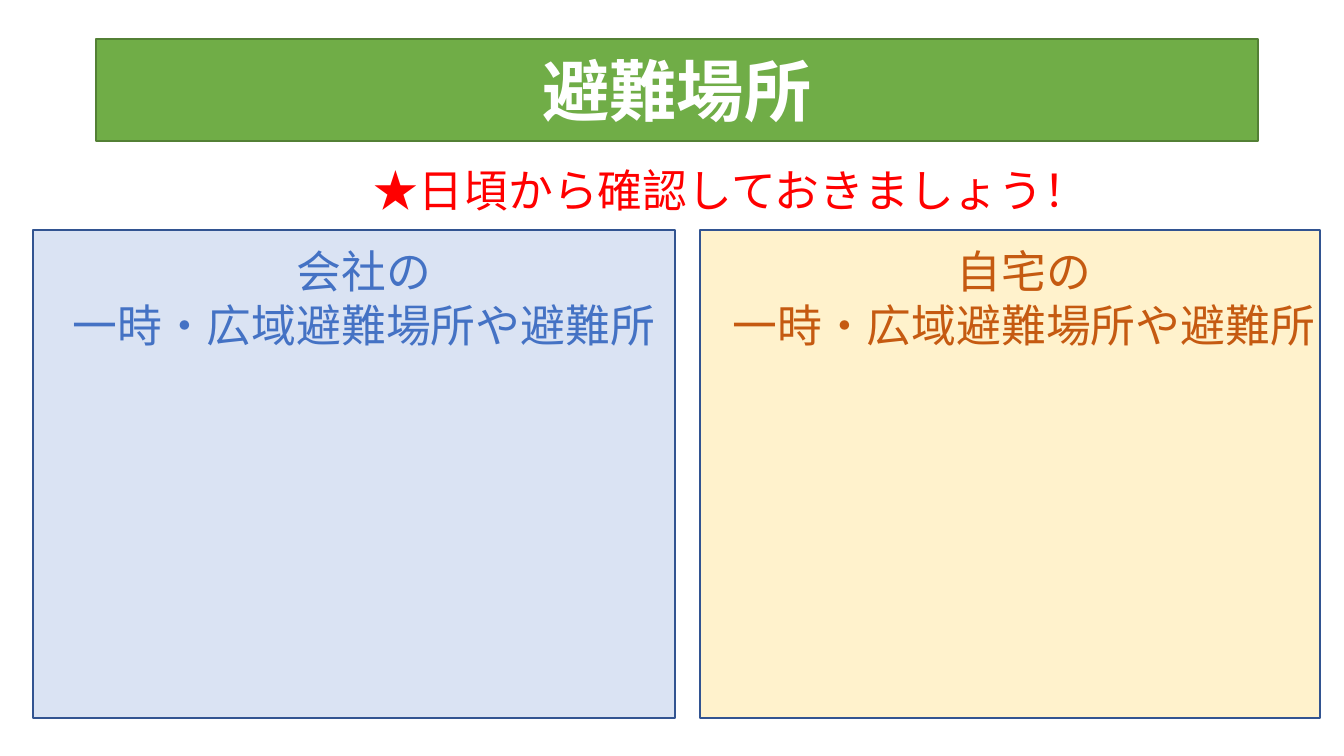
from pptx import Presentation
from pptx.dml.color import RGBColor
from pptx.enum.shapes import MSO_SHAPE
from pptx.enum.text import MSO_ANCHOR, MSO_AUTO_SIZE, PP_ALIGN
from pptx.util import Emu, Pt

WHITE = RGBColor(0xFF, 0xFF, 0xFF)
GREEN = RGBColor(0x70, 0xAD, 0x47)
DARK_GREEN = RGBColor(0x53, 0x80, 0x35)
RED = RGBColor(0xFF, 0x00, 0x00)
BLUE = RGBColor(0x44, 0x72, 0xC4)
PALE_BLUE = RGBColor(0xDA, 0xE3, 0xF3)
NAVY = RGBColor(0x32, 0x54, 0x91)
ORANGE = RGBColor(0xC5, 0x5A, 0x11)
PALE_YELLOW = RGBColor(0xFF, 0xF2, 0xCC)

PX_PER_INCH = 100.8


def px(*lengths):
    """Turn pixel lengths into a list of EMU lengths."""
    return [Emu(round(n * 914400 / PX_PER_INCH)) for n in lengths]


def write(tf, text, size=32, color=WHITE, bold=False, align=PP_ALIGN.CENTER,
          font="Calibri"):
    """Fill a text frame, one paragraph for each line of text."""
    tf.word_wrap = True
    for i, line in enumerate(text.split("\n")):
        p = tf.paragraphs[0] if i == 0 else tf.add_paragraph()
        p.alignment = align
        r = p.add_run()
        r.text = line
        r.font.name = font
        r.font.size = Pt(size)
        r.font.bold = bold
        r.font.color.rgb = color


class SlideBuilder:
    def __init__(self, prs):
        self.line_width = Pt(1)
        self.s = prs.slides.add_slide(prs.slide_layouts[5])

    def paint(self, sp, fill, line):
        sp.fill.solid()
        sp.fill.fore_color.rgb = fill
        sp.line.color.rgb = line
        sp.line.width = self.line_width

    def title(self, text, x, y, w, h, fill, line):
        sp = self.s.shapes.title
        sp.left, sp.top, sp.width, sp.height = px(x, y, w, h)
        self.paint(sp, fill, line)
        tf = sp.text_frame
        tf.auto_size = MSO_AUTO_SIZE.NONE
        tf.vertical_anchor = MSO_ANCHOR.MIDDLE
        write(tf, text, size=48, bold=True)

    def panel(self, x, y, w, h, fill, line=NAVY):
        sp = self.s.shapes.add_shape(MSO_SHAPE.RECTANGLE, *px(x, y, w, h))
        sp.shadow.inherit = False
        self.paint(sp, fill, line)

    def text(self, text, x, y, w, h, **style):
        tf = self.s.shapes.add_textbox(*px(x, y, w, h)).text_frame
        tf.auto_size = MSO_AUTO_SIZE.SHAPE_TO_FIT_TEXT
        write(tf, text, **style)


def main():
    prs = Presentation()
    prs.slide_width, prs.slide_height = px(1344, 756)
    slide = SlideBuilder(prs)

    slide.title("避難場所", 96, 39, 1162, 102, GREEN, DARK_GREEN)
    slide.text("★日頃から確認しておきましょう！", 364, 158, 776, 65,
               color=RED, align=PP_ALIGN.LEFT)

    shelters = [
        ("会社", 33, 642, PALE_BLUE, 34, BLUE),
        ("自宅", 700, 620, PALE_YELLOW, 694, ORANGE),
    ]
    for place, x, w, fill, text_x, color in shelters:
        slide.panel(x, 230, w, 488, fill)
        slide.text(f"{place}の\n一時・広域避難場所や避難所", text_x, 239, 660, 119,
                   color=color)

    prs.save("out.pptx")


if __name__ == "__main__":
    main()
